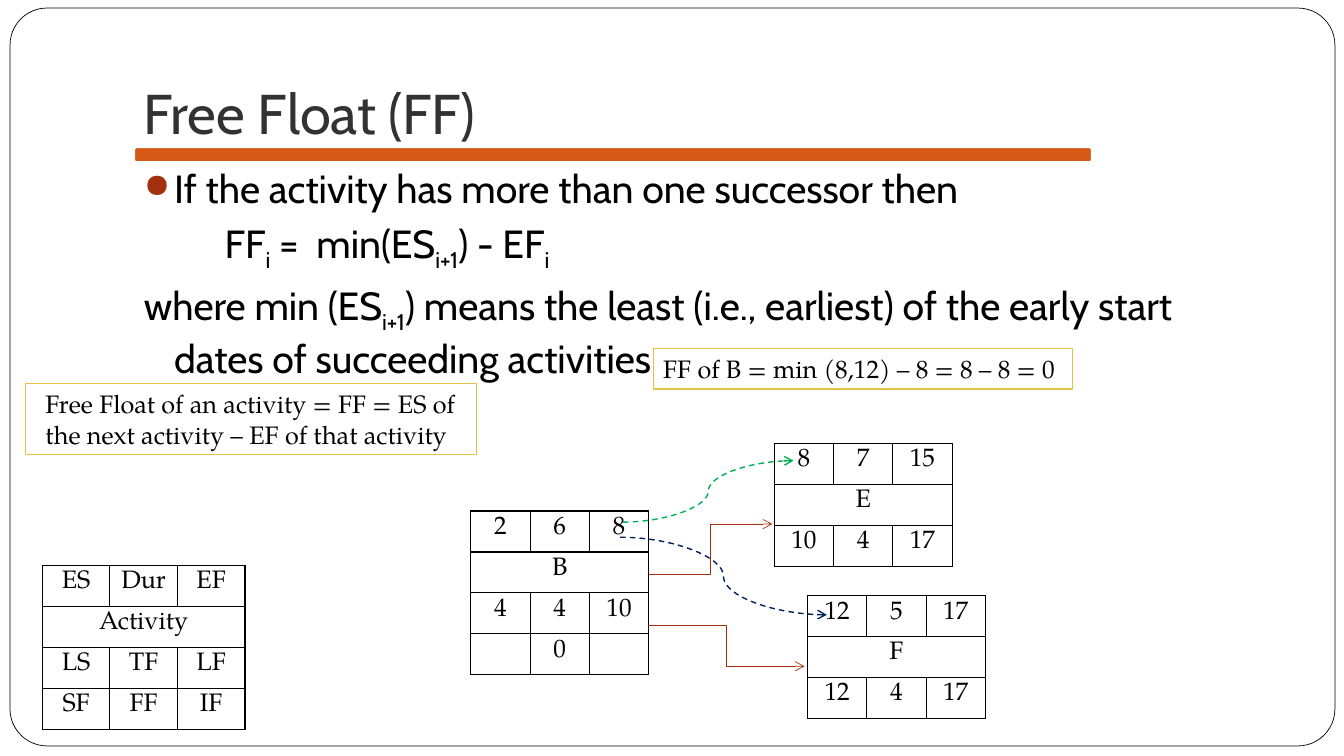
from pptx import Presentation
from pptx.dml.color import RGBColor
from pptx.enum.dml import MSO_LINE
from pptx.enum.shapes import MSO_CONNECTOR, MSO_SHAPE
from pptx.enum.text import MSO_ANCHOR, PP_ALIGN
from pptx.oxml.ns import qn
from pptx.util import Inches, Pt
from lxml.etree import SubElement

BLACK = RGBColor(0x00, 0x00, 0x00)
WHITE = RGBColor(0xFF, 0xFF, 0xFF)
GREY = RGBColor(0x32, 0x32, 0x32)
ORANGE = RGBColor(0xD5, 0x58, 0x16)
RUST = RGBColor(0xA5, 0x30, 0x0F)
GOLD = RGBColor(0xE5, 0xC2, 0x43)
GREEN = RGBColor(0x00, 0xB0, 0x50)
NAVY = RGBColor(0x00, 0x20, 0x60)
SANS = "Cabin"
SERIF = "TeX Gyre Pagella"
ROW = 0.406

# Each body paragraph is a list of (text, is subscript)
BODY = [
    [("If the activity has more than one successor then", False)],
    [("\t\tFF", False), ("i", True), (" =  min(ES", False), ("i+1", True),
     (") - EF", False), ("i", True)],
    [("where min (ES", False), ("i+1", True),
     (") means the least (i.e., earliest) of the early start "
      "dates of succeeding activities", False)],
]

# Left, top, column width, rows; a row of one text spans the table
NODES = [
    (4.67, 5.07, 0.588, [["2", "6", "8"], ["B"], ["4", "4", "10"], ["", "0", ""]]),
    (0.42, 5.61, 0.67, [["ES", "Dur", "EF"], ["Activity"],
                        ["LS", "TF", "LF"], ["SF", "FF", "IF"]]),
    (7.68, 4.4, 0.588, [["8", "7", "15"], ["E"], ["10", "4", "17"]]),
    (8.01, 5.91, 0.588, [["12", "5", "17"], ["F"], ["12", "4", "17"]]),
]

# Kind, start, end, colour, width, dashed
ARROWS = [
    (MSO_CONNECTOR.ELBOW, (6.44, 5.7), (7.66, 5.2), RUST, 0.5, False),
    (MSO_CONNECTOR.ELBOW, (6.43, 6.2), (7.98, 6.61), RUST, 0.5, False),
    (MSO_CONNECTOR.CURVE, (6.18, 5.18), (7.87, 4.57), GREEN, 1, True),
    (MSO_CONNECTOR.CURVE, (6.15, 5.33), (8.2, 6.1), NAVY, 1, True),
]


def set_font(para, name, size, color):
    para.font.name = name
    para.font.size = Pt(size)
    para.font.color.rgb = color


def add_box(slide, kind, area, fill, line, width):
    box = slide.shapes.add_shape(kind, *map(Inches, area))
    box.shadow.inherit = False
    if fill is None:
        box.fill.background()
    else:
        box.fill.solid()
        box.fill.fore_color.rgb = fill
    box.line.color.rgb = line
    box.line.width = Pt(width)
    return box


def add_title(slide, text):
    frame = slide.shapes.add_textbox(
        Inches(1.33), Inches(0.3), Inches(11.33), Inches(1.25)).text_frame
    frame.word_wrap = True
    frame.vertical_anchor = MSO_ANCHOR.BOTTOM
    frame.margin_bottom = Inches(0.1)
    frame.text = text
    set_font(frame.paragraphs[0], SANS, 40, GREY)


def add_bullet(props):
    color = SubElement(props, qn("a:buClr"))
    SubElement(color, qn("a:srgbClr"), val=str(RUST))
    SubElement(props, qn("a:buSzPct"), val="85000")
    SubElement(props, qn("a:buChar"), char="●")


def add_body(slide):
    frame = slide.shapes.add_textbox(
        Inches(1.33), Inches(1.58), Inches(11.33), Inches(5)).text_frame
    frame.word_wrap = True
    for i, parts in enumerate(BODY):
        para = frame.add_paragraph() if i else frame.paragraphs[0]
        para.space_before = Pt(5.8)
        props = para._p.get_or_add_pPr()
        props.set("marL", str(Inches(0.3)))
        props.set("indent", str(-Inches(0.3)))
        if i == 0:
            add_bullet(props)
        set_font(para, SANS, 28, BLACK)
        for text, sub in parts:
            run = para.add_run()
            run.text = text
            if sub:
                run.font._element.set("baseline", "-25000")


def add_note(slide, area, text, inset):
    box = add_box(slide, MSO_SHAPE.RECTANGLE, area, None, GOLD, 0.75)
    frame = box.text_frame
    frame.word_wrap = True
    frame.vertical_anchor = MSO_ANCHOR.MIDDLE
    frame.margin_left = Inches(inset)
    frame.text = text
    para = frame.paragraphs[0]
    para.alignment = PP_ALIGN.LEFT
    set_font(para, SERIF, 18, BLACK)


def style_cell(cell):
    cell.fill.background()
    para = cell.text_frame.paragraphs[0]
    para.alignment = PP_ALIGN.CENTER
    set_font(para, SERIF, 18, BLACK)
    props = cell._tc.get_or_add_tcPr()
    for i, side in enumerate(("lnL", "lnR", "lnT", "lnB")):
        edge = SubElement(props, qn("a:" + side), w=str(Pt(1)))
        fill = SubElement(edge, qn("a:solidFill"))
        SubElement(fill, qn("a:srgbClr"), val=str(BLACK))
        props.insert(i, edge)


def add_node(slide, left, top, width, rows):
    table = slide.shapes.add_table(
        len(rows), 3, Inches(left), Inches(top),
        Inches(3 * width), Inches(ROW * len(rows))).table
    table.first_row = table.horz_banding = False
    for col in table.columns:
        col.width = Inches(width)
    for r, texts in enumerate(rows):
        table.rows[r].height = Inches(ROW)
        if len(texts) == 1:
            table.cell(r, 0).merge(table.cell(r, 2))
        for c, text in enumerate(texts):
            table.cell(r, c).text = text
        for c in range(3):
            style_cell(table.cell(r, c))


def add_arrow(slide, kind, start, end, color, width, dashed):
    arrow = slide.shapes.add_connector(kind, *map(Inches, start + end))
    arrow.line.color.rgb = color
    arrow.line.width = Pt(width)
    if dashed:
        arrow.line.dash_style = MSO_LINE.DASH
    SubElement(arrow.line._get_or_add_ln(), qn("a:tailEnd"), type="arrow")
    SubElement(arrow._element.spPr, qn("a:effectLst"))


def main():
    prs = Presentation()
    prs.slide_width, prs.slide_height = Inches(13.33), Inches(7.5)
    slide = prs.slides.add_slide(prs.slide_layouts[6])

    # Frame and title bar
    frame = add_box(slide, MSO_SHAPE.ROUNDED_RECTANGLE,
                    (0.1, 0.08, 13.14, 7.32), WHITE, BLACK, 0.5)
    frame.adjustments[0] = 0.05
    add_box(slide, MSO_SHAPE.ROUNDED_RECTANGLE,
            (1.33, 1.46, 9.5, 0.15), ORANGE, WHITE, 1.5)

    # Title and rule
    add_title(slide, "Free Float (FF)")
    add_body(slide)

    # Activity network
    for node in NODES:
        add_node(slide, *node)
    add_note(slide, (0.25, 3.8, 4.48, 0.71),
             "Free Float of an activity = FF = ES of the next activity "
             "– EF of that activity", 0.2)
    add_note(slide, (6.48, 3.46, 4.16, 0.4),
             "FF of B = min (8,12) – 8 = 8 – 8 = 0", 0.1)
    for arrow in ARROWS:
        add_arrow(slide, *arrow)

    prs.save("out.pptx")


if __name__ == "__main__":
    main()
